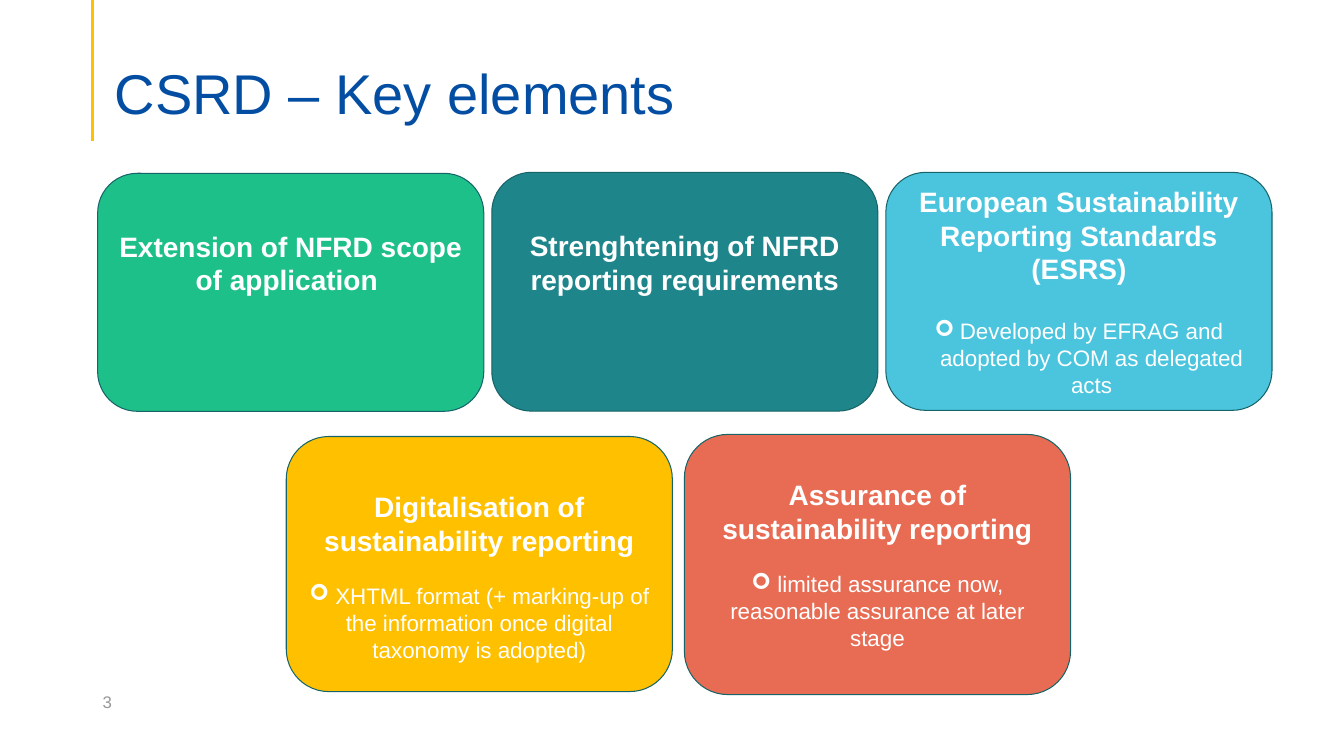
from dataclasses import dataclass

from lxml import etree
from pptx import Presentation
from pptx.dml.color import RGBColor
from pptx.enum import shapes, text
from pptx.oxml import ns
from pptx.util import Pt

WHITE = RGBColor(0xFF, 0xFF, 0xFF)
GREEN = RGBColor(0x1E, 0xC0, 0x8A)
TEAL = RGBColor(0x1E, 0x85, 0x8B)
CYAN = RGBColor(0x4B, 0xC5, 0xDE)
AMBER = RGBColor(0xFF, 0xC0, 0x00)
CORAL = RGBColor(0xE7, 0x6C, 0x53)
OUTLINE = RGBColor(0x17, 0x64, 0x68)
TITLE_BLUE = RGBColor(0x03, 0x4E, 0xA2)
GREY = RGBColor(0x97, 0x97, 0x97)

FONT = "Arial"
CARD_WIDTH = 275.8
INSET = 3.6


@dataclass
class Card:
    """Content and vertical placement of one key element."""

    top: float
    height: float
    fill: RGBColor
    headings: list
    detail: str = ""
    gap: float = 18
    indent: float = 0
    space_above: float = 0
    space_below: float = 0


TOP_ROW = [
    Card(123.8, 170, GREEN, ["Extension of NFRD scope of application "], space_below=42),
    Card(123.1, 170.6, TEAL, ["Strenghtening of NFRD reporting requirements"], space_below=42),
    Card(123.1, 170, CYAN, ["European Sustainability Reporting Standards", "(ESRS)"],
         "Developed by EFRAG and adopted by COM as delegated acts", gap=23, indent=18),
]
BOTTOM_ROW = [
    Card(311.8, 182.2, AMBER, ["Digitalisation of sustainability reporting"],
         " XHTML format (+ marking-up of the information once digital taxonomy is adopted)",
         space_above=17),
    Card(310.3, 185.8, CORAL, ["Assurance of sustainability reporting"],
         " limited assurance now, reasonable assurance at later stage"),
]


def style(paragraph, size, color, bold=False):
    """Set the font of a whole paragraph."""
    font = paragraph.font
    font.name, font.size, font.bold = FONT, Pt(size), bold
    font.color.rgb = color


def add_bullet(paragraph, indent):
    """Give a paragraph an arrow bullet with a hanging indent."""
    properties = paragraph._p.get_or_add_pPr()
    properties.set("marL", str(Pt(indent)))
    properties.set("indent", str(Pt(-indent)))
    etree.SubElement(properties, ns.qn("a:buFont"), typeface="Wingdings")
    etree.SubElement(properties, ns.qn("a:buChar"), char="➢")


def add_header(slide, left, top, width, height):
    """Draw the accent line and place the title beside it."""
    line = slide.shapes.add_connector(
        shapes.MSO_CONNECTOR.STRAIGHT, Pt(left), Pt(top), Pt(left), Pt(top + height))
    line.line.color.rgb = AMBER
    line.line.width = Pt(2.25)
    etree.SubElement(line._element.spPr, ns.qn("a:effectLst"))

    title = slide.shapes.title
    title.left, title.top = Pt(left + 8.7), Pt(top + 28.8)
    title.width, title.height = Pt(width - 8.7), Pt(62)
    frame = title.text_frame
    frame.text = "CSRD – Key elements"
    frame.auto_size = text.MSO_AUTO_SIZE.NONE
    frame.vertical_anchor = text.MSO_ANCHOR.BOTTOM
    frame.margin_bottom = 0
    paragraph = frame.paragraphs[0]
    paragraph.alignment = text.PP_ALIGN.LEFT
    paragraph.line_spacing = 0.9
    style(paragraph, 40, TITLE_BLUE)


def add_card(slide, left, card):
    """Draw one rounded card with its heading and optional detail."""
    shape = slide.shapes.add_shape(
        shapes.MSO_SHAPE.ROUNDED_RECTANGLE,
        Pt(left), Pt(card.top), Pt(CARD_WIDTH), Pt(card.height))
    shape.shadow.inherit = False
    shape.fill.solid()
    shape.fill.fore_color.rgb = card.fill
    shape.line.color.rgb = OUTLINE
    shape.line.width = Pt(0.75)

    frame = shape.text_frame
    frame.word_wrap = True
    frame.vertical_anchor = text.MSO_ANCHOR.MIDDLE
    frame.margin_top = Pt(INSET + card.space_above)
    frame.margin_bottom = Pt(INSET + card.space_below)
    for index, heading in enumerate(card.headings):
        paragraph = frame.add_paragraph() if index else frame.paragraphs[0]
        paragraph.text = heading
        paragraph.alignment = text.PP_ALIGN.CENTER
        style(paragraph, 20, WHITE, bold=True)
    if card.detail:
        paragraph = frame.add_paragraph()
        paragraph.text = card.detail
        paragraph.alignment = text.PP_ALIGN.CENTER
        paragraph.space_before = Pt(card.gap)
        add_bullet(paragraph, card.indent)
        style(paragraph, 16, WHITE)


def add_row(slide, left, pitch, cards):
    """Place cards from left to right at an equal pitch."""
    for column, card in enumerate(cards):
        add_card(slide, left + column * pitch, card)


def add_page_number(slide, left, top, width, height):
    """Place the page number in its box."""
    frame = slide.shapes.add_textbox(Pt(left), Pt(top), Pt(width), Pt(height)).text_frame
    frame.word_wrap = True
    frame.vertical_anchor = text.MSO_ANCHOR.MIDDLE
    paragraph = frame.paragraphs[0]
    paragraph.text = "3"
    style(paragraph, 12, GREY)


def main():
    """Build the slide and save it."""
    presentation = Presentation()
    presentation.slide_width, presentation.slide_height = Pt(960), Pt(540)
    slide = presentation.slides.add_slide(presentation.slide_layouts[5])
    add_header(slide, 66.2, 0, 836.7, 100.8)
    add_row(slide, 69.8, 281.5, TOP_ROW)
    add_row(slide, 204.5, 284.4, BOTTOM_ROW)
    add_page_number(slide, 66.2, 491.8, 23, 19.4)
    presentation.save("out.pptx")


if __name__ == "__main__":
    main()
